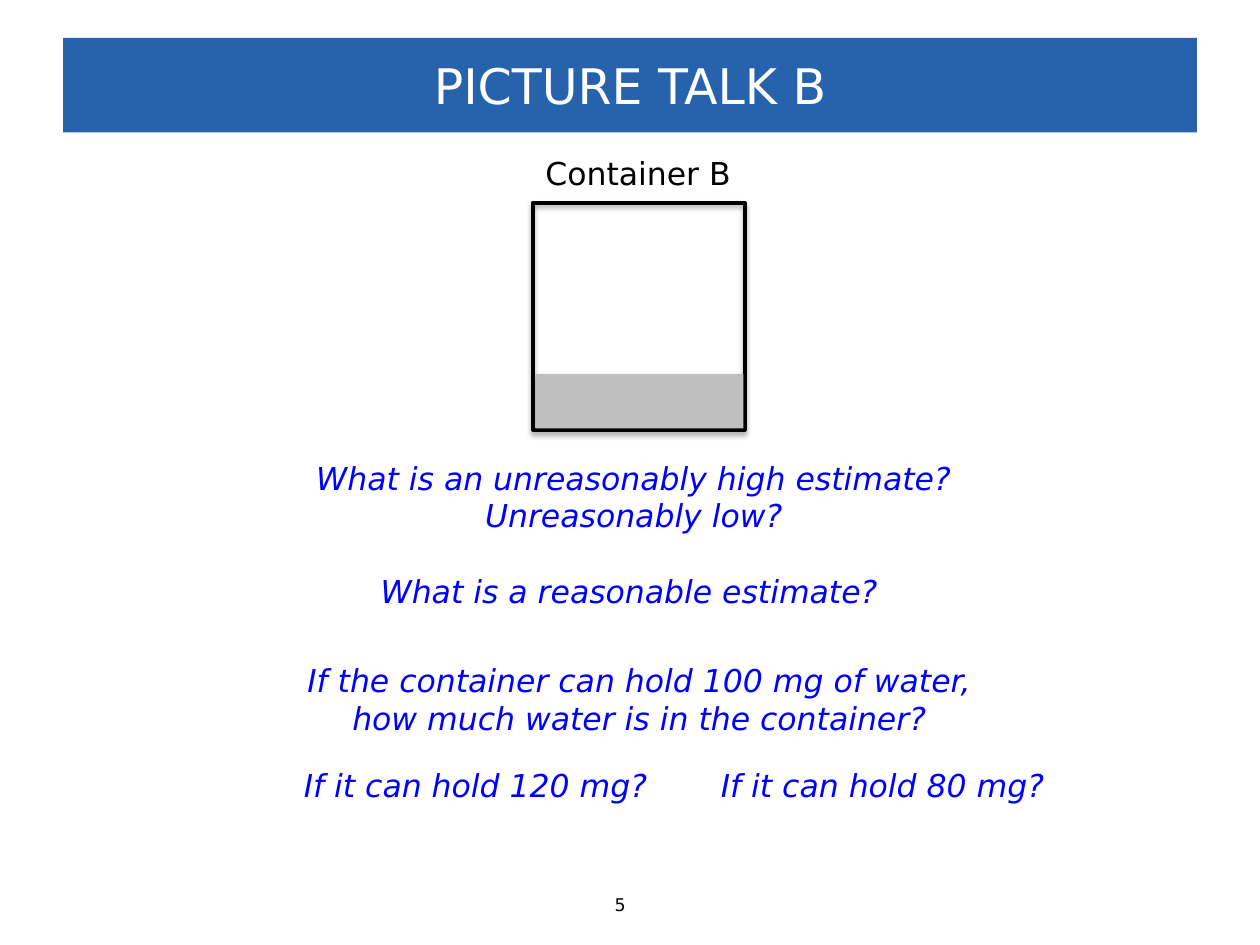
from lxml import etree
from pptx import Presentation
from pptx.dml.color import RGBColor
from pptx.enum.shapes import MSO_SHAPE
from pptx.enum.text import MSO_ANCHOR, MSO_AUTO_SIZE, PP_ALIGN
from pptx.oxml.ns import qn
from pptx.util import Inches, Pt

RECTANGLE = MSO_SHAPE.RECTANGLE
MIDDLE = MSO_ANCHOR.MIDDLE
FIT_SHAPE = MSO_AUTO_SIZE.SHAPE_TO_FIT_TEXT
NO_FIT = MSO_AUTO_SIZE.NONE
LEFT, CENTER = PP_ALIGN.LEFT, PP_ALIGN.CENTER

FONT = "DejaVu Sans"
COLORS = {
    "banner": "2762AD",
    "title": "FFFFFF",
    "label": "000000",
    "question": "0000FF",
    "water": "BFBFBF",
}

TITLE = "PICTURE TALK B"
TITLE_AREA = (0.5, 0.3, 9, 0.75)
LABELS = [
    ("Container B", (4.23, 1.17, 1.69, 0.4), 18),
    ("5", (4.78, 7.05, 0.44, 0.27), 10),
]
QUESTIONS = [
    ("What is an unreasonably high estimate? Unreasonably low?", (2.39, 3.59, 5.28, 0.71)),
    ("What is a reasonable estimate?", (2.91, 4.49, 4.17, 0.4)),
    ("If the container can hold 100 mg of water, how much water is in the container?",
     (2.26, 5.2, 5.63, 0.71)),
    ("If it can hold 120 mg?", (2.26, 6.03, 3.03, 0.4)),
    ("If it can hold 80 mg?", (5.49, 6.03, 3.03, 0.4)),
]
CONTAINER_AREA = (4.23, 1.61, 1.68, 1.8)
WATER_AREA = (4.25, 2.97, 1.65, 0.43)


def color(name):
    return RGBColor.from_string(COLORS[name])


def lengths(area):
    return [Inches(value) for value in area]


def write(shape, text, size, color_name, alignment, italic=False):
    shape.text_frame.text = text
    para = shape.text_frame.paragraphs[0]
    para.alignment = alignment
    font = para.runs[0].font
    font.name = FONT
    font.size = Pt(size)
    font.italic = italic
    font.color.rgb = color(color_name)


def add_text(slide, text, area, size, color_name, alignment, wrap, italic=False):
    box = slide.shapes.add_textbox(*lengths(area))
    box.text_frame.word_wrap = wrap
    box.text_frame.auto_size = FIT_SHAPE
    write(box, text, size, color_name, alignment, italic)


def add_shadow(shape):
    shape.shadow.inherit = False
    effects = shape._element.spPr.find(qn("a:effectLst"))
    shadow = etree.SubElement(effects, qn("a:outerShdw"), blurRad=str(Pt(3.1)),
                              dist=str(Pt(1.8)), dir="5400000", rotWithShape="0")
    tint = etree.SubElement(shadow, qn("a:srgbClr"), val="000000")
    etree.SubElement(tint, qn("a:alpha"), val="35000")


def add_container(slide):
    group = slide.shapes.add_group_shape()
    outline = group.shapes.add_shape(RECTANGLE, *lengths(CONTAINER_AREA))
    outline.fill.background()
    outline.line.color.rgb = color("label")
    outline.line.width = Pt(2.25)
    water = group.shapes.add_shape(RECTANGLE, *lengths(WATER_AREA))
    water.fill.solid()
    water.fill.fore_color.rgb = color("water")
    water.line.fill.background()
    for shape in (outline, water):
        add_shadow(shape)


def main():
    deck = Presentation()
    deck.slide_width, deck.slide_height = Inches(10), Inches(7.5)
    slide = deck.slides.add_slide(deck.slide_layouts[5])

    title = slide.shapes.title
    title.left, title.top, title.width, title.height = lengths(TITLE_AREA)
    title.fill.solid()
    title.fill.fore_color.rgb = color("banner")
    title.text_frame.vertical_anchor = MIDDLE
    title.text_frame.auto_size = NO_FIT
    write(title, TITLE, 28, "title", CENTER)

    for text, area, size in LABELS:
        add_text(slide, text, area, size, "label", LEFT, False)
    for text, area in QUESTIONS:
        add_text(slide, text, area, 18, "question", CENTER, True, True)
    add_container(slide)

    deck.save("out.pptx")


if __name__ == "__main__":
    main()
